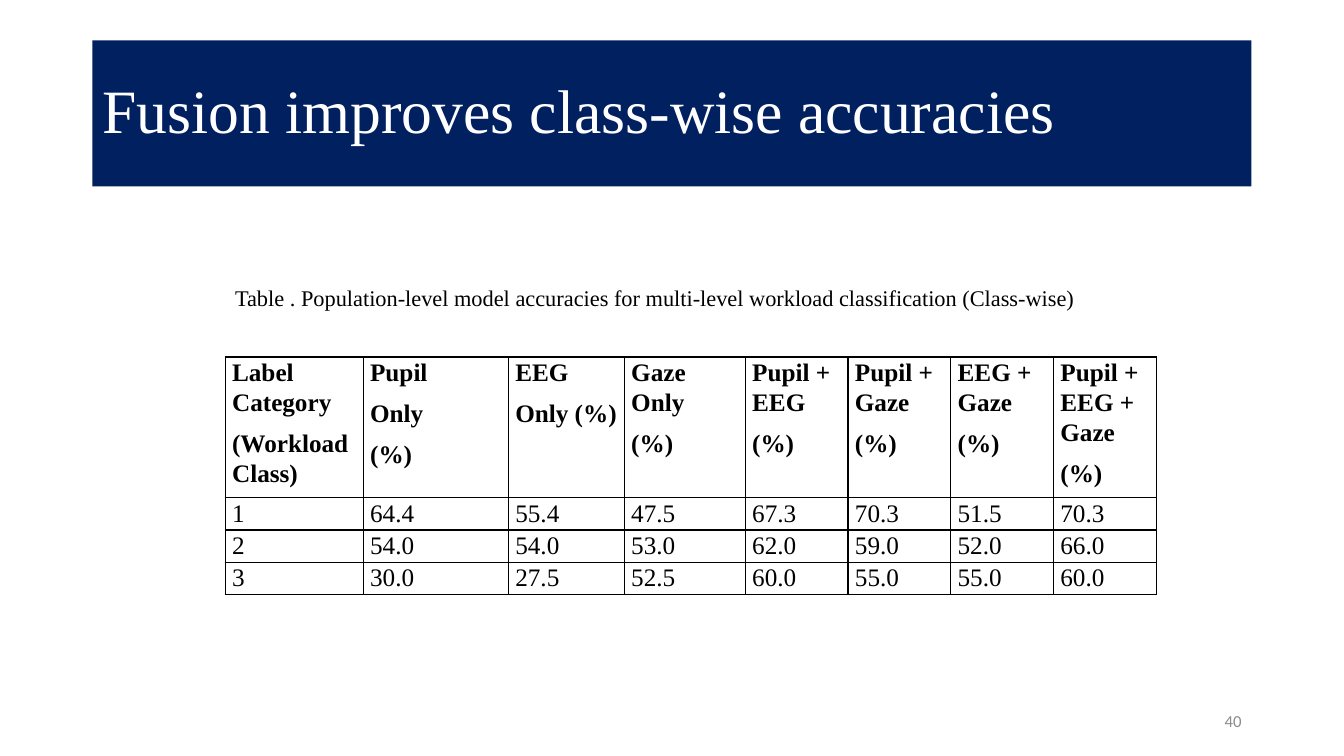
from pptx import Presentation
from pptx.dml.color import RGBColor
from pptx.enum.shapes import MSO_SHAPE
from pptx.enum.text import MSO_ANCHOR, PP_ALIGN
from pptx.oxml.ns import qn
from pptx.util import Pt
from lxml import etree

RECT = MSO_SHAPE.RECTANGLE
TOP, MIDDLE = MSO_ANCHOR.TOP, MSO_ANCHOR.MIDDLE
LEFT, RIGHT = PP_ALIGN.LEFT, PP_ALIGN.RIGHT
SERIF, SANS = "Times New Roman", "Calibri"
NAVY, WHITE, BLACK, GREY = "002060", "FFFFFF", "000000", "8C8C8C"

COL_WIDTHS = [98.6, 103.7, 82.8, 86.4] + [73.4] * 4
ROW_HEIGHTS = [96.4] + [20.2] * 3
HEADERS = [
    ["Label Category", "(Workload Class)"],
    ["Pupil", "Only", "(%)"],
    ["EEG", "Only (%)"],
    ["Gaze Only", "(%)"],
    ["Pupil + EEG", "(%)"],
    ["Pupil + Gaze", "(%)"],
    ["EEG + Gaze", "(%)"],
    ["Pupil + EEG + Gaze", "(%)"],
]
ACCURACIES = [
    ["1", "64.4", "55.4", "47.5", "67.3", "70.3", "51.5", "70.3"],
    ["2", "54.0", "54.0", "53.0", "62.0", "59.0", "52.0", "66.0"],
    ["3", "30.0", "27.5", "52.5", "60.0", "55.0", "55.0", "60.0"],
]


def rgb(color):
    return RGBColor.from_string(color)


def write(tf, lines, size, color=BLACK, font=SERIF, bold=False, **para):
    """Fill a text frame, one paragraph per line."""
    for i, line in enumerate(lines):
        p = tf.add_paragraph() if i else tf.paragraphs[0]
        for name, value in para.items():
            setattr(p, name, value)
        r = p.add_run()
        r.text = line
        for name, value in {"size": Pt(size), "name": font, "bold": bold}.items():
            setattr(r.font, name, value)
        r.font.color.rgb = rgb(color)


def add_title(slide, box, text):
    sp = slide.shapes.add_shape(RECT, *map(Pt, box))
    sp.shadow.inherit = False
    sp.fill.solid()
    sp.fill.fore_color.rgb = rgb(NAVY)
    sp.line.fill.background()
    sp.text_frame.vertical_anchor = MIDDLE
    write(sp.text_frame, [text], 44, WHITE, alignment=LEFT, line_spacing=0.9)


def add_text(slide, box, text, size, anchor, **style):
    tf = slide.shapes.add_textbox(*map(Pt, box)).text_frame
    tf.word_wrap = True
    tf.vertical_anchor = anchor
    write(tf, [text], size, **style)


def add_borders(cell):
    tc_pr = cell._tc.get_or_add_tcPr()
    for i, side in enumerate(("lnL", "lnR", "lnT", "lnB")):
        ln = etree.Element(qn(f"a:{side}"), w=str(Pt(1)))
        fill = etree.SubElement(ln, qn("a:solidFill"))
        etree.SubElement(fill, qn("a:srgbClr"), val=BLACK)
        tc_pr.insert(i, ln)


def add_accuracy_table(slide, left, top):
    rows = [HEADERS] + [[[value] for value in row] for row in ACCURACIES]
    table = slide.shapes.add_table(
        len(rows), len(HEADERS), Pt(left), Pt(top),
        Pt(sum(COL_WIDTHS)), Pt(sum(ROW_HEIGHTS))).table
    table.horz_banding = False
    for col, width in zip(table.columns, COL_WIDTHS):
        col.width = Pt(width)
    for row, height in zip(table.rows, ROW_HEIGHTS):
        row.height = Pt(height)
    margins = {"margin_left": 5, "margin_right": 5, "margin_top": 0, "margin_bottom": 0}
    for i, row in enumerate(rows):
        for j, lines in enumerate(row):
            cell = table.cell(i, j)
            for name, value in margins.items():
                setattr(cell, name, Pt(value))
            cell.fill.background()
            add_borders(cell)
            write(cell.text_frame, lines, 18, bold=i == 0,
                  line_spacing=1.07, space_after=Pt(8))


def main():
    prs = Presentation()
    prs.slide_width, prs.slide_height = Pt(960), Pt(540)
    slide = prs.slides.add_slide(prs.slide_layouts[6])
    add_title(slide, (66, 28.8, 828, 104.4), "Fusion improves class-wise accuracies")
    add_text(slide, (678, 500.5, 216, 28.8), "40", 12, MIDDLE,
             color=GREY, font=SANS, alignment=RIGHT)
    add_accuracy_table(slide, 160.8, 255)
    add_text(slide, (160.8, 199.5, 676.8, 48.2),
             "Table . Population-level model accuracies for multi-level "
             "workload classification (Class-wise)", 16, TOP)
    prs.save("out.pptx")


if __name__ == "__main__":
    main()
